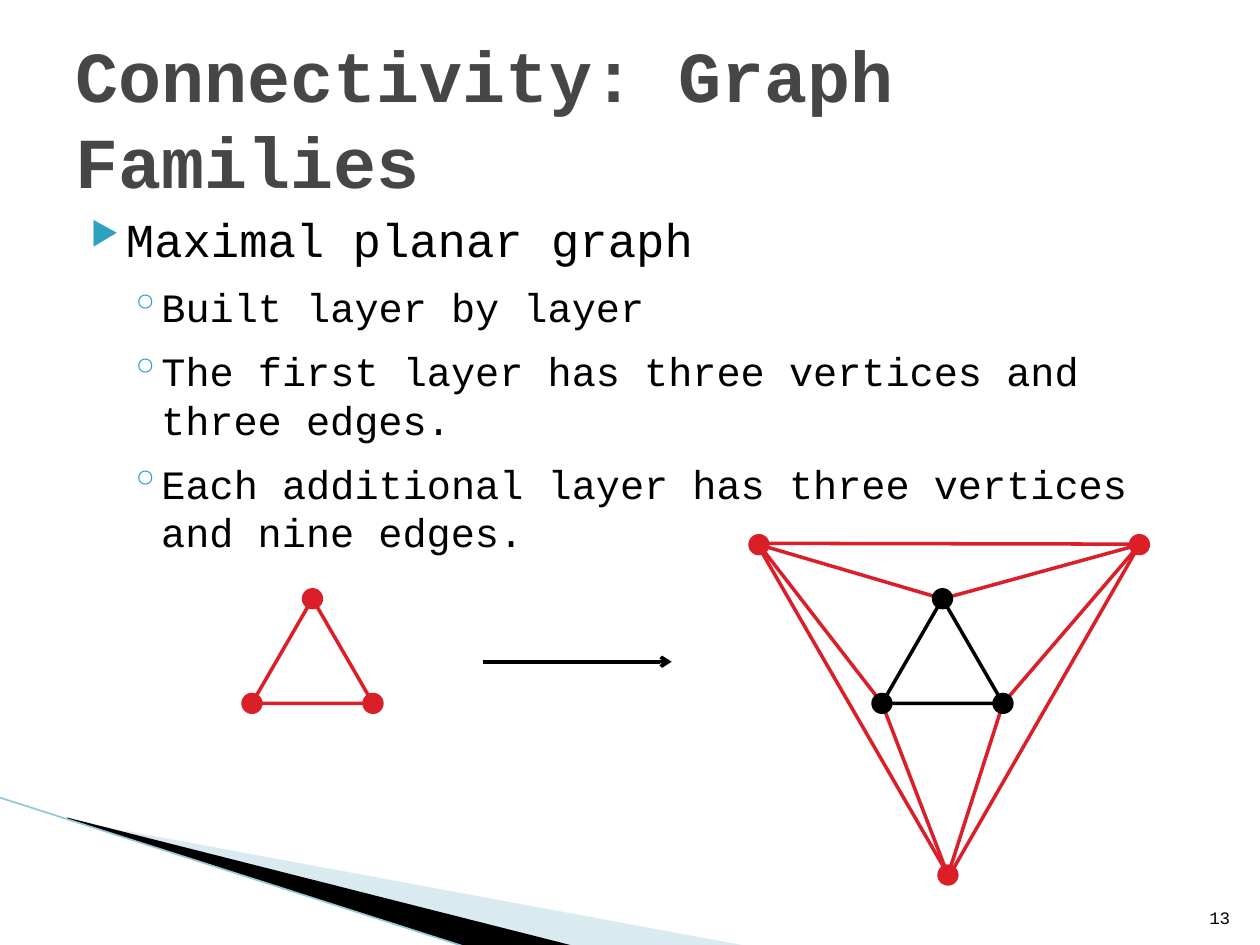
import pptx
import pptx.util
import pptx.dml.color
import pptx.enum.shapes
import pptx.enum.text
import pptx.oxml
import pptx.oxml.ns

Cm, Pt = pptx.util.Cm, pptx.util.Pt
KIND = pptx.enum.shapes.MSO_SHAPE
ALIGN = pptx.enum.text.PP_ALIGN
ANCHOR = pptx.enum.text.MSO_ANCHOR

FONT = "Courier New"
HUES = {"red": "DA1F28", "black": "000000", "grey": "464646",
        "teal": "2DA2BF", "pale": "A0CBDC", "edge": "97C5D8"}

TITLE = "Connectivity: Graph Families"
POINTS = [
    (0, "Maximal planar graph"),
    (1, "Built layer by layer"),
    (1, "The first layer has three vertices and three edges."),
    (1, "Each additional layer has three vertices and nine edges."),
]
# Per level: size, bullet, bullet size in %, left margin, hanging, space before
LEVELS = [(27, "▶", 68, 1.02, 0.71, 0), (23, "◦", 100, 1.73, 0.64, 9)]

# Lengths in cm
SWOOSH = [
    ("pale", 40, [(1.4, 16.54), (15.11, 19.08), (11.58, 19.08), (1.4, 16.51)]),
    ("black", 100, [(1.35, 16.48), (11.61, 19.08), (9.45, 19.1), (1.37, 16.51)]),
]
WIDE, HIGH, DOT = 2.44, 2.11, 0.43
FIRST, INNER = (5.08, 12.07), (17.78, 12.07)
OUTER = [(15.3, 10.98), (22.97, 10.98), (19.11, 17.64)]
# Each outer vertex meets two inner ones: 0 top, 1 left, 2 right
SPOKES = [(0, 0), (0, 1), (1, 0), (1, 2), (2, 1), (2, 2)]


def hue(name):
    return pptx.dml.color.RGBColor.from_string(HUES[name])


def add_tag(parent, name, **attrs):
    tag = pptx.oxml.parse_xml(f"<a:{name} {pptx.oxml.ns.nsdecls('a')}/>")
    for key, value in attrs.items():
        tag.set(key, str(value))
    parent.append(tag)
    return tag


def paint(shape, fill=None, line=None):
    shape.shadow.inherit = False
    if fill:
        shape.fill.solid()
        shape.fill.fore_color.rgb = hue(fill)
    else:
        shape.fill.background()
    if line:
        shape.line.color.rgb = hue(line)
        shape.line.width = Pt(2)
    else:
        shape.line.fill.background()


def add_line(slide, start, end, color, width=2, arrow=False):
    line = slide.shapes.add_connector(
        pptx.enum.shapes.MSO_CONNECTOR.STRAIGHT,
        *[Cm(n) for n in (*start, *end)])
    line.line.color.rgb = hue(color)
    line.line.width = Pt(width)
    if arrow:
        add_tag(line.line._get_or_add_ln(), "tailEnd", type="arrow")
    add_tag(line._element.spPr, "effectLst")


def add_shape(slide, kind, box, fill=None, line=None, turn=0):
    shape = slide.shapes.add_shape(kind, *[Cm(n) for n in box])
    shape.rotation = turn
    paint(shape, fill, line)


def add_dots(slide, spots, color):
    for x, y in spots:
        add_shape(slide, KIND.OVAL, (x - DOT / 2, y - DOT / 2, DOT, DOT), color)


def corners(spot):
    """Top, left and right corner of a small triangle."""
    x, y = spot
    return [(x + WIDE / 2, y), (x, y + HIGH), (x + WIDE, y + HIGH)]


def add_run(para, text, size, color, bold=False):
    run = para.add_run()
    run.text = text
    font = run.font
    font.name, font.size, font.bold = FONT, Pt(size), bold
    font.color.rgb = hue(color)


def place(shape, box):
    shape.left, shape.top, shape.width, shape.height = [Cm(n) for n in box]


def add_box(slide, box):
    frame = slide.shapes.add_textbox(*[Cm(n) for n in box]).text_frame
    frame.word_wrap = True
    return frame


def add_swoosh(slide):
    for color, alpha, spots in SWOOSH:
        spots = [(Cm(x), Cm(y)) for x, y in spots]
        form = slide.shapes.build_freeform(*spots[0], scale=1.0)
        form.add_line_segments(spots[1:], close=True)
        shape = form.convert_to_shape()
        paint(shape, color)
        if alpha < 100:
            tag = shape._element.spPr.find(".//" + pptx.oxml.ns.qn("a:srgbClr"))
            add_tag(tag, "alpha", val=alpha * 1000)
    add_line(slide, (0, 16.08), (9.42, 19.1), "edge", 0.95)


def add_title(slide):
    title = slide.shapes.title
    place(title, (1.27, 0.76, 22.86, 3.18))
    frame = title.text_frame
    frame.word_wrap = True
    frame.auto_size = pptx.enum.text.MSO_AUTO_SIZE.NONE
    frame.vertical_anchor = ANCHOR.MIDDLE
    para = frame.paragraphs[0]
    para.alignment = ALIGN.LEFT
    add_run(para, TITLE, 41, "grey", True)


def add_points(slide):
    frame = add_box(slide, (1.27, 4.11, 22.86, 6.25))
    for i, (level, text) in enumerate(POINTS):
        size, mark, scale, left, hang, gap = LEVELS[level]
        para = frame.add_paragraph() if i else frame.paragraphs[0]
        para.level = level
        props = para._p.get_or_add_pPr()
        props.set("marL", str(Cm(left)))
        props.set("indent", str(-Cm(hang)))
        add_tag(add_tag(props, "buClr"), "srgbClr", val=HUES["teal"])
        add_tag(props, "buSzPct", val=scale * 1000)
        add_tag(props, "buChar", char=mark)
        para.space_before = Pt(gap)
        add_run(para, text, size, "black")


def add_number(slide):
    frame = add_box(slide, (24.03, 17.81, 1.02, 1.02))
    frame.vertical_anchor = ANCHOR.BOTTOM
    para = frame.paragraphs[0]
    para.alignment = ALIGN.RIGHT
    add_run(para, "13", 10, "black")


def add_graphs(slide):
    inner = corners(INNER)
    add_shape(slide, KIND.ISOSCELES_TRIANGLE, (*INNER, WIDE, HIGH), line="black")
    add_shape(slide, KIND.ISOSCELES_TRIANGLE, (16.21, 9.3, 7.75, 6.68),
              line="red", turn=60)
    for far, near in SPOKES:
        add_line(slide, OUTER[far], inner[near], "red")
    add_shape(slide, KIND.ISOSCELES_TRIANGLE, (*FIRST, WIDE, HIGH), line="red")
    add_line(slide, (9.73, 13.34), (13.54, 13.34), "black", arrow=True)
    add_dots(slide, corners(FIRST) + OUTER, "red")
    add_dots(slide, inner, "black")


def main():
    deck = pptx.Presentation()
    deck.slide_width, deck.slide_height = Cm(25.4), Cm(19.05)
    slide = deck.slides.add_slide(deck.slide_layouts[5])
    add_swoosh(slide)
    add_title(slide)
    add_points(slide)
    add_number(slide)
    add_graphs(slide)
    deck.save("out.pptx")


if __name__ == "__main__":
    main()
